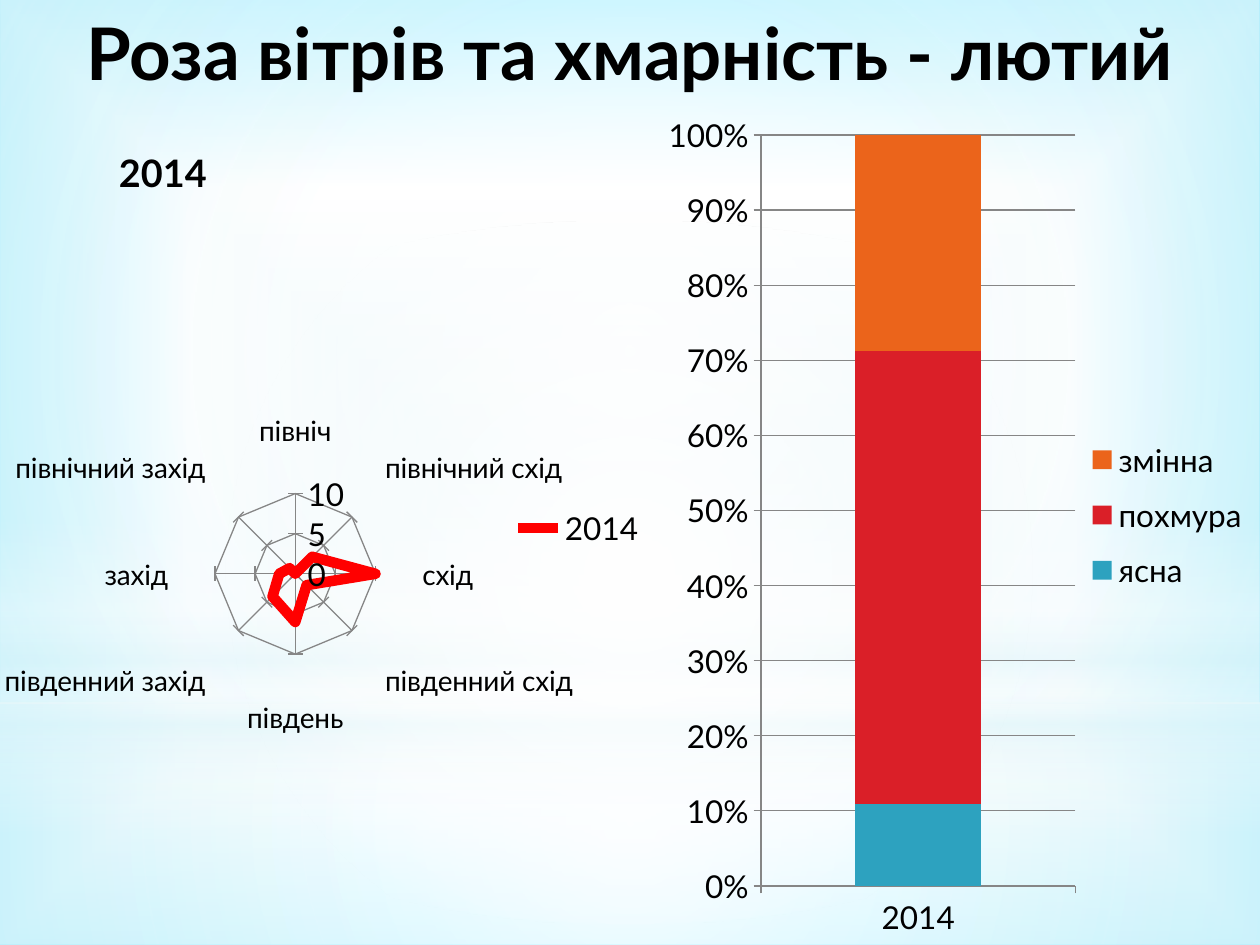
"""Builds a slide with the February wind rose and cloudiness chart."""
from lxml.etree import SubElement
from pptx import Presentation
from pptx.chart.data import CategoryChartData
from pptx.dml.color import RGBColor
from pptx.enum.chart import XL_CHART_TYPE, XL_LEGEND_POSITION, XL_TICK_MARK
from pptx.enum.shapes import MSO_SHAPE
from pptx.enum.text import MSO_ANCHOR, MSO_AUTO_SIZE, PP_ALIGN
from pptx.oxml.ns import qn
from pptx.util import Inches, Pt

FONT = "Lato"
COLORS = {
    "text": "000000", "grid": "868686", "wind": "FF0000",
    "ясна": "2DA2BF", "похмура": "DA1F28", "змінна": "EB641B",
    "white": "FFFFFF", "pale": "DEF5FA", "mist": "CDEFF7", "sky": "7CE7FF",
}


def paint_gradient(owner, stops, path):
    """Fill the owner with stops of (position, colour, opacity), along a path or downwards."""
    owner.fill.gradient()
    element = page.element if owner is page.background else owner.element
    gradient = next(element.iter(qn("a:gradFill")))
    for child in list(gradient):
        gradient.remove(child)
    stop_list = SubElement(gradient, qn("a:gsLst"))
    for position, color, opacity in stops:
        stop = SubElement(stop_list, qn("a:gs"), pos=str(position * 1000))
        tint = SubElement(stop, qn("a:srgbClr"), val=COLORS[color])
        SubElement(tint, qn("a:alpha"), val=str(opacity * 1000))
    if path:
        route = SubElement(gradient, qn("a:path"), path=path)
        SubElement(route, qn("a:fillToRect"), l="50000", t="50000", r="50000", b="50000")
    else:
        SubElement(gradient, qn("a:lin"), ang="5400000", scaled="0")


def place(parent, **shares):
    """Set a manual layout on a chart part, in shares of the chart's size."""
    for old in parent.findall(qn("c:layout")):
        parent.remove(old)
    layout = parent.makeelement(qn("c:layout"))
    manual = SubElement(layout, qn("c:manualLayout"))
    if parent.tag == qn("c:plotArea"):
        SubElement(manual, qn("c:layoutTarget"), val="inner")
    for side in ("x", "y"):
        SubElement(manual, qn(f"c:{side}Mode"), val="edge")
    for side, share in shares.items():
        SubElement(manual, qn(f"c:{side}"), val=str(share))
    anchors = [child for child in parent if child.tag in (qn("c:tx"), qn("c:legendPos"))]
    parent.insert(parent.index(anchors[-1]) + 1 if anchors else 0, layout)


deck = Presentation()
deck.slide_width, deck.slide_height = Inches(10), Inches(7.5)
page = deck.slides.add_slide(deck.slide_layouts[5])
paint_gradient(page.background, [(0, "mist", 45), (60, "white", 100), (100, "sky", 100)], "shape")

panels = [
    (MSO_SHAPE.RECTANGLE, 5.58, 1.92, "circle",
     [(0, "white", 91), (37, "white", 76), (100, "pale", 79)]),
    (MSO_SHAPE.RECTANGLE, 0, 5.58, "circle",
     [(0, "white", 89), (48, "white", 62), (100, "pale", 79)]),
    (MSO_SHAPE.RECTANGLE, 4.12, 2.5, None,
     [(0, "white", 0), (29, "white", 30), (45, "pale", 40),
      (55, "white", 26), (65, "pale", 60), (100, "white", 0)]),
    (MSO_SHAPE.OVAL, 1.75, 5.58, "circle", [(0, "white", 100), (56, "white", 0)]),
]
for kind, top, height, path, stops in panels:
    panel = page.shapes.add_shape(kind, 0, Inches(top), deck.slide_width, Inches(height))
    panel.shadow.inherit = False
    panel.line.fill.background()
    paint_gradient(panel, stops, path)

title = page.shapes.title
title.element.getparent().append(title.element)
title.left, title.top, title.width, title.height = 0, 0, deck.slide_width, Inches(0.81)
box = title.text_frame
box.word_wrap = True
box.auto_size = MSO_AUTO_SIZE.NONE
box.vertical_anchor = MSO_ANCHOR.MIDDLE
para = box.paragraphs[0]
para.alignment = PP_ALIGN.CENTER
span = para.add_run()
span.text = "Роза вітрів та хмарність - лютий"
span.font.name, span.font.size, span.font.bold = FONT, Pt(41.4), True
span.font.color.rgb = RGBColor.from_string(COLORS["text"])

cloud_data = CategoryChartData()
cloud_data.categories = ["2014"]
for sky, days in (("ясна", 11), ("похмура", 61), ("змінна", 29)):
    cloud_data.add_series(sky, [days])
wind_data = CategoryChartData()
wind_data.categories = ["північ", "північний схід", "схід", "південний схід",
                        "південь", "південний захід", "захід", "північний захід"]
wind_data.add_series("2014", [0, 3, 10, 2, 6, 4, 2, 1])

clouds, winds = [
    page.shapes.add_chart(kind, *map(Inches, frame), data).chart
    for kind, frame, data in (
        (XL_CHART_TYPE.COLUMN_STACKED_100, (5.24, 0.92, 4.79, 6.6), cloud_data),
        (XL_CHART_TYPE.RADAR, (0, 0.9, 5.23, 6.58), wind_data),
    )
]
for chart in (clouds, winds):
    chart.font.name, chart.font.size = FONT, Pt(18)
    chart.font.color.rgb = RGBColor.from_string(COLORS["text"])
    chart.has_legend = True
    chart.legend.position = XL_LEGEND_POSITION.RIGHT
    chart.legend.include_in_layout = False
    chart.value_axis.has_major_gridlines = True
    lines = [chart.value_axis.major_gridlines.format.line]
    for axis in (chart.value_axis, chart.category_axis):
        axis.major_tick_mark = XL_TICK_MARK.OUTSIDE
        axis.minor_tick_mark = XL_TICK_MARK.NONE
        lines.append(axis.format.line)
    for line in lines:
        line.color.rgb = RGBColor.from_string(COLORS["grid"])
        line.width = Pt(0.75)

clouds.has_title = False
clouds.value_axis.tick_labels.number_format = "0%"
clouds.value_axis.tick_labels.number_format_is_linked = False
columns = clouds.plots[0]
columns.vary_by_categories = False
columns.overlap, columns.gap_width = 100, 150
for series in columns.series:
    series.format.fill.solid()
    series.format.fill.fore_color.rgb = RGBColor.from_string(COLORS[series.name])
plot_area = next(clouds.element.iter(qn("c:plotArea")))
place(plot_area, x=0.167, y=0.023, w=0.521, h=0.903)
place(next(clouds.element.iter(qn("c:legend"))), x=0.69, y=0.37, w=0.3, h=0.22)

winds.has_title = True
span = winds.chart_title.text_frame.paragraphs[0].add_run()
span.text = "2014"
span.font.name, span.font.size, span.font.bold = FONT, Pt(21.6), True
span.font.color.rgb = RGBColor.from_string(COLORS["text"])
place(next(winds.element.iter(qn("c:title"))), x=0.17, y=0.03)
winds.value_axis.major_tick_mark = XL_TICK_MARK.CROSS
winds.value_axis.minimum_scale, winds.value_axis.maximum_scale = 0, 10
winds.value_axis.major_unit = 5
winds.category_axis.has_major_gridlines = True
winds.category_axis.tick_labels.font.size = Pt(16)
winds.plots[0].vary_by_categories = False
rose = winds.plots[0].series[0]
rose.smooth = False
rose.format.line.color.rgb = RGBColor.from_string(COLORS["wind"])
rose.format.line.width = Pt(6)

deck.save("out.pptx")
